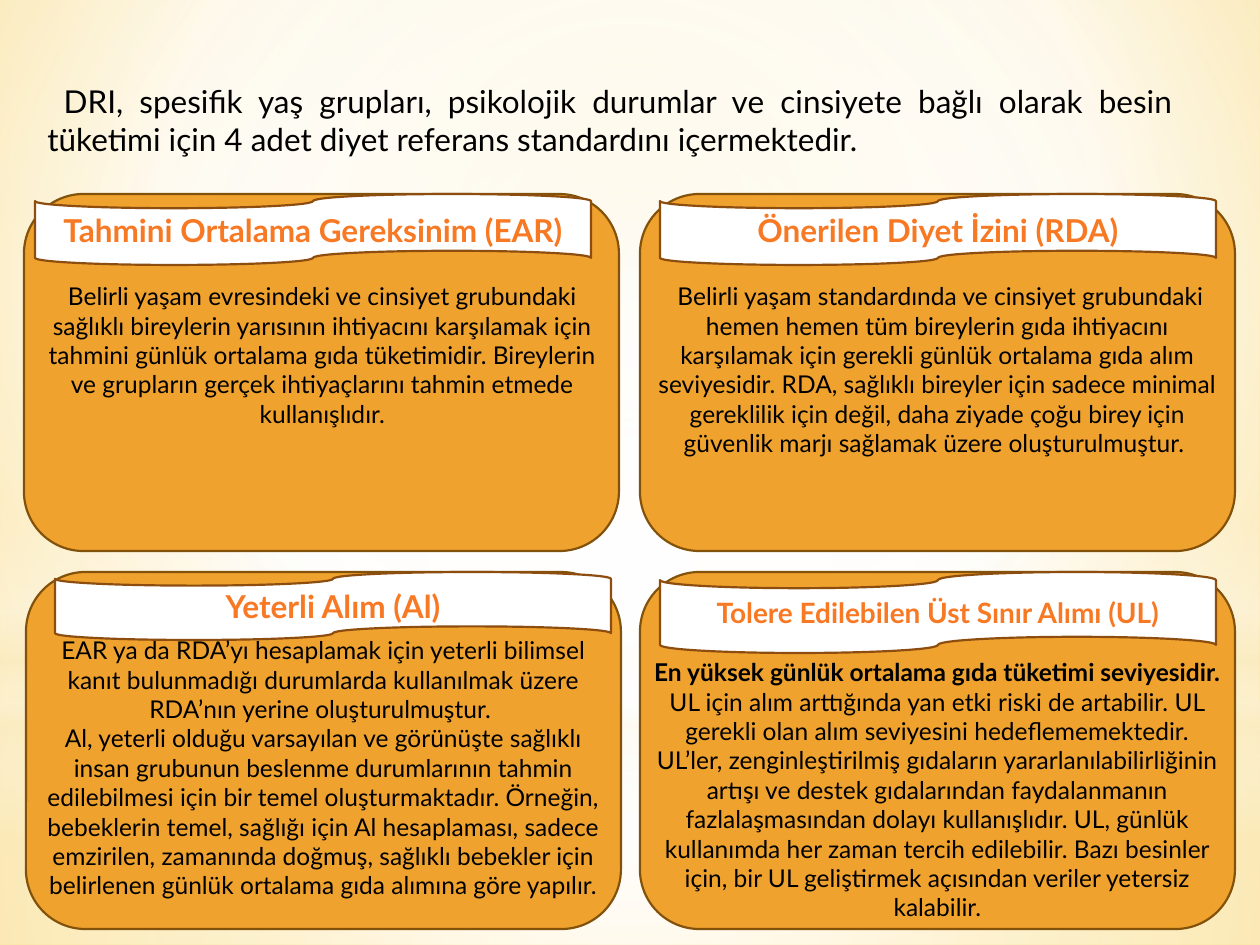
from lxml.etree import fromstring
from pptx import Presentation
from pptx.dml.color import RGBColor as Rgb
from pptx.enum.shapes import MSO_SHAPE as Kind
from pptx.enum.text import MSO_ANCHOR as Anchor, MSO_AUTO_SIZE as Fit, PP_ALIGN as Align
from pptx.oxml.ns import qn
from pptx.util import Emu, Pt

SCALE = 914400 / 126
FONT = "Lato"
INK = {
    "white": "FFFFFF", "cream": "FBEEC9", "sand": "FEEAB3", "gold": "FFD96C",
    "card": "F0A22E", "edge": "82520B", "rim": "8C4D0F",
    "head": "F87924", "text": "000000",
}
NS = "http://schemas.openxmlformats.org/drawingml/2006/main"
MID = (50, 50, 50, 50)

# Soft light layers: kind, box, stops (place, colour, opacity), focus or None for linear
GLOWS = [
    (Kind.RECTANGLE, (0, 703, 1260, 242),
     [(0, "white", 91), (37, "white", 76), (100, "cream", 79)], MID),
    (Kind.RECTANGLE, (0, 0, 1260, 703),
     [(0, "white", 89), (48, "white", 62), (100, "cream", 79)], MID),
    (Kind.RECTANGLE, (0, 519, 1260, 315),
     [(0, "white", 0), (29, "white", 30), (45, "cream", 40),
      (55, "white", 26), (65, "cream", 60), (100, "white", 0)], None),
    (Kind.OVAL, (0, 221, 1260, 703),
     [(0, "white", 100), (56, "white", 0)], MID),
]

INTRO = (" DRI, spesifik yaş grupları, psikolojik durumlar ve cinsiyete bağlı olarak besin "
         "tüketimi için 4 adet diyet referans standardını içermektedir.")

# Card corner, tape box, heading, heading size, body box, paragraphs of (words, bold)
CARDS = [
    ((24, 194), (35, 194, 556, 71), "Tahmini Ortalama Gereksinim (EAR)", 18,
     (26, 275, 593, 161),
     [[("Belirli yaşam evresindeki ve cinsiyet grubundaki sağlıklı bireylerin yarısının "
        "ihtiyacını karşılamak için tahmini günlük ortalama gıda tüketimidir. Bireylerin "
        "ve grupların gerçek ihtiyaçlarını tahmin etmede kullanışlıdır.", False)]]),
    ((640, 194), (660, 194, 556, 71), "Önerilen Diyet İzini (RDA)", 18,
     (640, 275, 595, 220),
     [[(" Belirli yaşam standardında ve cinsiyet grubundaki hemen hemen tüm bireylerin "
        "gıda ihtiyacını karşılamak için gerekli günlük ortalama gıda alım seviyesidir. "
        "RDA, sağlıklı bireyler için sadece minimal gereklilik için değil, daha ziyade "
        "çoğu birey için güvenlik marjı sağlamak üzere oluşturulmuştur. ", False)]]),
    ((26, 572), (55, 572, 556, 68), "Yeterli Alım (Al)", 18,
     (26, 629, 595, 339),
     [[("EAR ya da RDA’yı hesaplamak için yeterli bilimsel kanıt bulunmadığı durumlarda "
        "kullanılmak üzere RDA’nın yerine oluşturulmuştur. ", False)],
      [("Al, yeterli olduğu varsayılan ve görünüşte sağlıklı insan grubunun beslenme "
        "durumlarının tahmin edilebilmesi için bir temel oluşturmaktadır. Örneğin, "
        "bebeklerin temel, sağlığı için Al hesaplaması, sadece emzirilen, zamanında "
        "doğmuş, sağlıklı bebekler için belirlenen günlük ortalama gıda alımına göre "
        "yapılır.", False)]]),
    ((640, 572), (660, 572, 556, 81), "Tolere Edilebilen Üst Sınır Alımı (UL)", 16,
     (640, 651, 595, 280),
     [[("En yüksek günlük ortalama gıda tüketimi seviyesidir. ", True),
       ("UL için alım arttığında yan etki riski de artabilir. UL gerekli olan alım "
        "seviyesini hedeflememektedir. UL’ler, zenginleştirilmiş gıdaların "
        "yararlanılabilirliğinin artışı ve destek gıdalarından faydalanmanın "
        "fazlalaşmasından dolayı kullanışlıdır. UL, günlük kullanımda her zaman tercih "
        "edilebilir. Bazı besinler için, bir UL geliştirmek açısından veriler yetersiz "
        "kalabilir.", False)]]),
]
CARD = (595, 357)


def px(num):
    return Emu(round(num * SCALE))


def rgb(name):
    return Rgb.from_string(INK[name])


def apply(item, form):
    for key, val in form.items():
        setattr(item, key, val)


def shade(node, stops, focus):
    """Swap the first solid fill under node for a gradient."""
    marks = "".join(
        f'<a:gs pos="{pos * 1000}"><a:srgbClr val="{INK[name]}">'
        f'<a:alpha val="{dim * 1000}"/></a:srgbClr></a:gs>'
        for pos, name, dim in stops)
    if focus:
        sides = " ".join(f'{s}="{n * 1000}"' for s, n in zip("ltrb", focus))
        way = f'<a:path path="circle"><a:fillToRect {sides}/></a:path>'
    else:
        way = '<a:lin ang="5400000" scaled="0"/>'
    grad = fromstring(f'<a:gradFill xmlns:a="{NS}" rotWithShape="1">'
                      f'<a:gsLst>{marks}</a:gsLst>{way}</a:gradFill>')
    old = node.find(".//" + qn("a:solidFill"))
    old.getparent().replace(old, grad)


def add_form(slide, kind, box, fill, line=None):
    form = slide.shapes.add_shape(kind, *map(px, box))
    form.shadow.inherit = False
    form.fill.solid()
    form.fill.fore_color.rgb = rgb(fill)
    if line:
        form.line.color.rgb = rgb(line)
        form.line.width = Pt(1.25)
    else:
        form.line.fill.background()
    return form


def write(frame, paras, size, ink="text", align=Align.CENTER):
    for num, runs in enumerate(paras):
        para = frame.add_paragraph() if num else frame.paragraphs[0]
        para.alignment = align
        for words, bold in runs:
            run = para.add_run()
            run.text = words
            apply(run.font, {"name": FONT, "size": Pt(size), "bold": bold})
            run.font.color.rgb = rgb(ink)


def add_text(slide, box, paras, size, align=Align.CENTER):
    frame = slide.shapes.add_textbox(*map(px, box)).text_frame
    apply(frame, {"word_wrap": True, "auto_size": Fit.SHAPE_TO_FIT_TEXT})
    write(frame, paras, size, align=align)


def add_tape(slide, box, words, size):
    tape = add_form(slide, Kind.FLOWCHART_PUNCHED_TAPE, box, "white", "rim")
    apply(tape.text_frame, {"word_wrap": True, "vertical_anchor": Anchor.MIDDLE})
    write(tape.text_frame, [[(words, True)]], size, "head")


def add_back(slide):
    slide.background.fill.solid()
    shade(slide.element.find(".//" + qn("p:bgPr")),
          [(0, "sand", 100), (60, "white", 100), (100, "gold", 100)], (20, 10, 20, 60))
    for kind, box, stops, focus in GLOWS:
        shade(add_form(slide, kind, box, "white").element, stops, focus)


def main():
    deck = Presentation()
    apply(deck, {"slide_width": px(1260), "slide_height": px(945)})
    slide = deck.slides.add_slide(deck.slide_layouts[6])

    # Background and opening sentence
    add_back(slide)
    add_text(slide, (35, 76, 1150, 89), [[(INTRO, False)]], 18, Align.JUSTIFY)

    # Cards first, then their tapes and body text on top
    for spot, *_ in CARDS:
        add_form(slide, Kind.ROUNDED_RECTANGLE, spot + CARD, "card", "edge")
    for _, tape, head, size, *_ in CARDS:
        add_tape(slide, tape, head, size)
    for *_, box, paras in CARDS:
        add_text(slide, box, paras, 14)

    deck.save("out.pptx")


if __name__ == "__main__":
    main()
